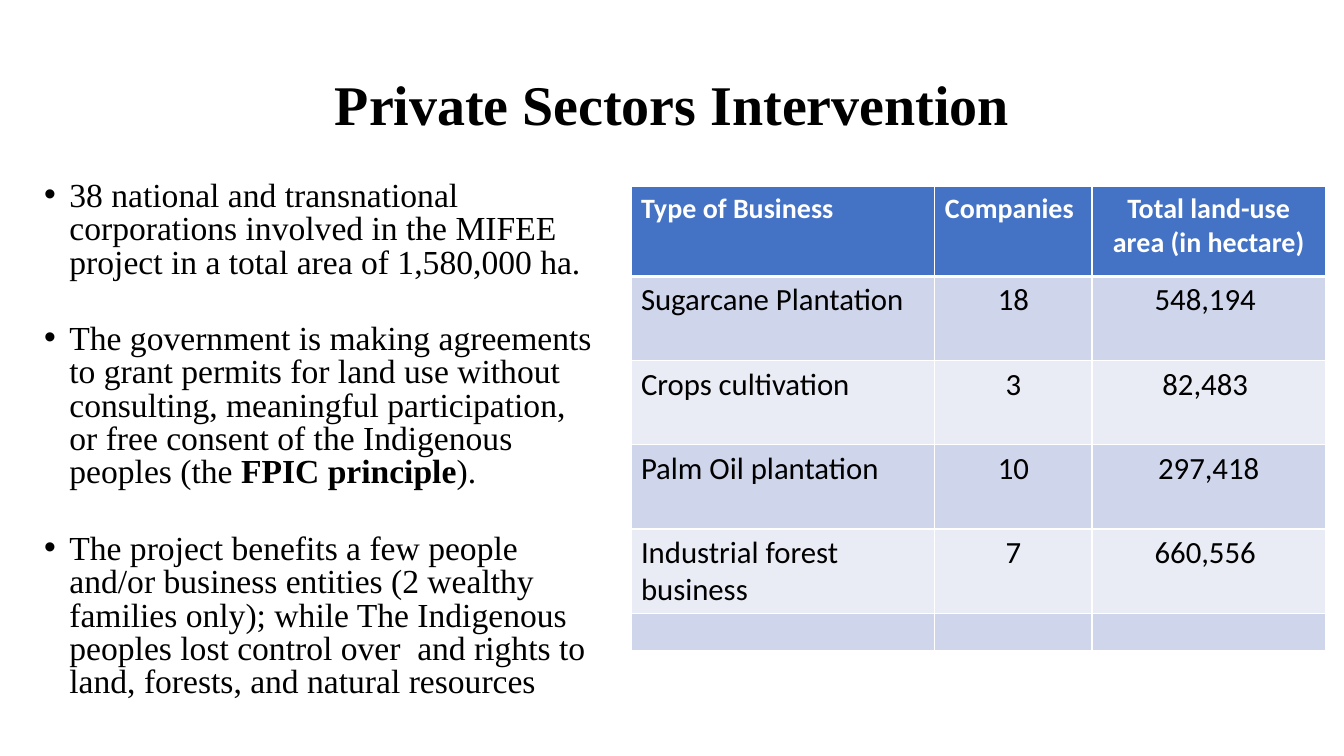
"""Build the slide on private sector intervention."""
from dataclasses import dataclass

from lxml.etree import SubElement
from pptx import Presentation
from pptx.dml.color import RGBColor
from pptx.enum.text import MSO_ANCHOR, PP_ALIGN
from pptx.oxml.ns import qn
from pptx.util import Cm, Pt

BLACK = RGBColor(0x00, 0x00, 0x00)
WHITE = RGBColor(0xFF, 0xFF, 0xFF)
HEADER_BLUE = RGBColor(0x44, 0x72, 0xC4)
BAND_DARK = RGBColor(0xCF, 0xD5, 0xEA)
BAND_LIGHT = RGBColor(0xE9, 0xEB, 0xF5)

TITLE_FORMAT = {"name": "Times New Roman", "size": Pt(40), "bold": True}
BODY_FORMAT = {"name": "Times New Roman", "size": Pt(24), "bold": False}
STRONG_FORMAT = BODY_FORMAT | {"bold": True}
HEADER_FORMAT = {"name": "Calibri", "size": Pt(20), "bold": True}
CELL_FORMAT = {"name": "Calibri", "size": Pt(22), "bold": False}


@dataclass
class TextArea:
    left: float
    top: float
    width: float
    height: float
    anchor: MSO_ANCHOR


@dataclass
class Span:
    text: str
    strong: bool = False


TITLE_AREA = TextArea(2.33, 1.01, 29.21, 3.39, MSO_ANCHOR.MIDDLE)
BODY_AREA = TextArea(0.86, 4.42, 14.48, 14.25, MSO_ANCHOR.TOP)

BULLETS = [
    [Span("38 national and transnational corporations involved in the MIFEE "
          "project in a total area of 1,580,000 ha.")],
    [Span("The government is making agreements to grant permits for land use "
          "without consulting, meaningful participation, or free consent of "
          "the Indigenous peoples (the "),
     Span("FPIC principle", strong=True),
     Span(").")],
    [Span("The project benefits a few people and/or business entities "
          "(2 wealthy families only); while The Indigenous peoples lost "
          "control over  and rights to land, forests, and natural resources")],
]

TABLE_ROWS = [
    ("Type of Business", "Companies", "Total land-use area (in hectare)"),
    ("Sugarcane Plantation", "18", "548,194 "),
    ("Crops cultivation", "3", "82,483 "),
    ("Palm Oil plantation", "10", "297,418"),
    ("Industrial forest business", "7", "660,556 "),
    ("", "", ""),
]
COLUMN_WIDTHS = [7.66, 3.96, 5.88]
ROW_HEIGHTS = [2.27, 2.12, 2.12, 2.12, 2.12, 0.94]


def add_span(para, text: str, formats: dict, color: RGBColor) -> None:
    """Add a formatted run to a paragraph."""
    span = para.add_run()
    span.text = text
    for name, value in formats.items():
        setattr(span.font, name, value)
    span.font.color.rgb = color


def add_text_area(page, area: TextArea):
    """Add a wrapping text box and return its text frame."""
    box = page.shapes.add_textbox(
        Cm(area.left), Cm(area.top), Cm(area.width), Cm(area.height))
    box.text_frame.word_wrap = True
    box.text_frame.vertical_anchor = area.anchor
    return box.text_frame


def add_title(page) -> None:
    """Add the centred slide title."""
    para = add_text_area(page, TITLE_AREA).paragraphs[0]
    para.alignment = PP_ALIGN.CENTER
    para.line_spacing = 0.9
    add_span(para, "Private Sectors Intervention", TITLE_FORMAT, BLACK)


def add_bullets(page) -> None:
    """Add the bulleted text on the left."""
    frame = add_text_area(page, BODY_AREA)
    for index, spans in enumerate(BULLETS):
        para = frame.add_paragraph() if index else frame.paragraphs[0]
        properties = para._p.get_or_add_pPr()
        properties.set("marL", str(Cm(0.64)))
        properties.set("indent", str(Cm(-0.64)))
        SubElement(properties, qn("a:buFont"), typeface="Arial")
        SubElement(properties, qn("a:buChar"), char="•")
        para.line_spacing = 0.83
        para.space_before = Pt(30.5 if index else 0)
        for span in spans:
            formats = STRONG_FORMAT if span.strong else BODY_FORMAT
            add_span(para, span.text, formats, BLACK)


def add_borders(cell, bottom_width: float) -> None:
    """Draw white lines on the four sides of a cell."""
    properties = cell._tc.get_or_add_tcPr()
    widths = {"lnL": 1, "lnR": 1, "lnT": 1, "lnB": bottom_width}
    for side, width in widths.items():
        line = SubElement(properties, qn(f"a:{side}"), w=str(Pt(width)))
        fill = SubElement(line, qn("a:solidFill"))
        SubElement(fill, qn("a:srgbClr"), val=str(WHITE))


def fill_cell(cell, text: str, row: int, column: int) -> None:
    """Set the borders, fill and text of one table cell."""
    is_header = row == 0
    add_borders(cell, 3 if is_header else 1)
    cell.fill.solid()
    band = BAND_DARK if row % 2 else BAND_LIGHT
    cell.fill.fore_color.rgb = HEADER_BLUE if is_header else band
    para = cell.text_frame.paragraphs[0]
    if not text:
        SubElement(para._p, qn("a:endParaRPr"), sz="1600")
        return
    centred = column == 2 or (column == 1 and not is_header)
    para.alignment = PP_ALIGN.CENTER if centred else PP_ALIGN.LEFT
    add_span(para, text, HEADER_FORMAT if is_header else CELL_FORMAT,
             WHITE if is_header else BLACK)


def add_business_table(page) -> None:
    """Add the table of companies and land use."""
    table = page.shapes.add_table(
        len(ROW_HEIGHTS), len(COLUMN_WIDTHS), Cm(15.9), Cm(4.7),
        Cm(sum(COLUMN_WIDTHS)), Cm(sum(ROW_HEIGHTS))).table
    for column, width in zip(table.columns, COLUMN_WIDTHS):
        column.width = Cm(width)
    for row, height in zip(table.rows, ROW_HEIGHTS):
        row.height = Cm(height)
    for row_index, texts in enumerate(TABLE_ROWS):
        for column_index, text in enumerate(texts):
            cell = table.cell(row_index, column_index)
            fill_cell(cell, text, row_index, column_index)


def main() -> None:
    """Create and save the deck."""
    deck = Presentation()
    deck.slide_width, deck.slide_height = Cm(33.87), Cm(19.05)
    page = deck.slides.add_slide(deck.slide_layouts[6])
    add_title(page)
    add_bullets(page)
    add_business_table(page)
    deck.save("out.pptx")


if __name__ == "__main__":
    main()
